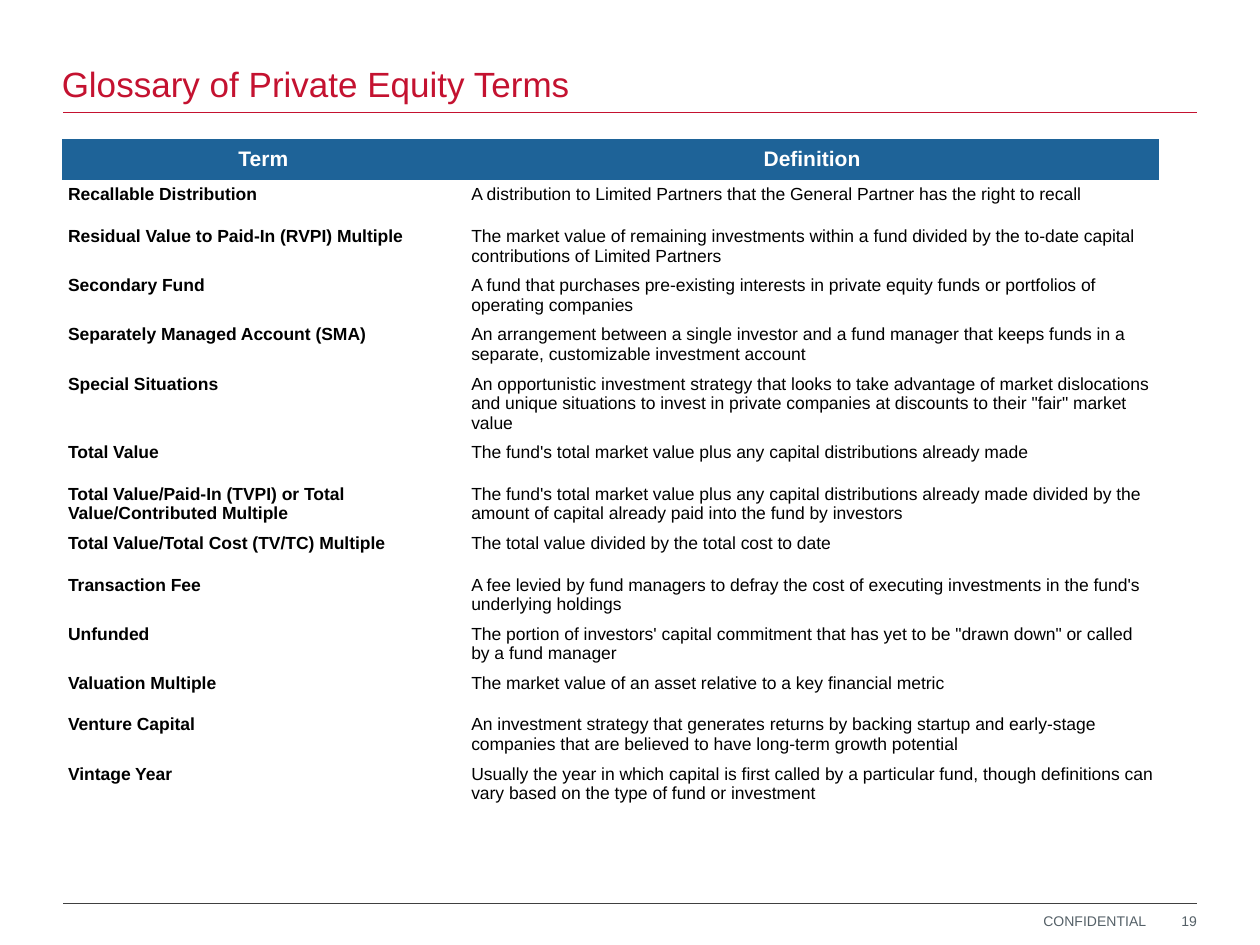
import pptx
import pptx.util
import pptx.dml.color
import pptx.enum.shapes
import pptx.enum.text
from lxml import etree

Inches, Pt = pptx.util.Inches, pptx.util.Pt
RGBColor = pptx.dml.color.RGBColor
PP_ALIGN, MSO_ANCHOR = pptx.enum.text.PP_ALIGN, pptx.enum.text.MSO_ANCHOR

RED = RGBColor(0xC4, 0x12, 0x30)
BLUE = RGBColor(0x1E, 0x63, 0x98)
GREY = RGBColor(0x55, 0x61, 0x68)
DARK = RGBColor(0x40, 0x40, 0x40)
BLACK = RGBColor(0, 0, 0)
WHITE = RGBColor(0xFF, 0xFF, 0xFF)

PLAIN_TABLE_STYLE = "{2D5ABB26-0587-4C30-8999-92F81FD0307C}"

GLOSSARY = [
    ("Term", "Definition"),
    ("Recallable Distribution",
     "A distribution to Limited Partners that the General Partner has the right to recall"),
    ("Residual Value to Paid-In (RVPI) Multiple",
     "The market value of remaining investments within a fund divided by the to-date "
     "capital contributions of Limited Partners"),
    ("Secondary Fund",
     "A fund that purchases pre-existing interests in private equity funds or "
     "portfolios of operating companies"),
    ("Separately Managed Account (SMA)",
     "An arrangement between a single investor and a fund manager that keeps funds in a "
     "separate, customizable investment account"),
    ("Special Situations",
     "An opportunistic investment strategy that looks to take advantage of market "
     "dislocations and unique situations to invest in private companies at discounts to "
     'their "fair" market value'),
    ("Total Value",
     "The fund's total market value plus any capital distributions already made"),
    ("Total Value/Paid-In (TVPI) or Total Value/Contributed Multiple",
     "The fund's total market value plus any capital distributions already made divided "
     "by the amount of capital already paid into the fund by investors"),
    ("Total Value/Total Cost (TV/TC) Multiple",
     "The total value divided by the total cost to date"),
    ("Transaction Fee",
     "A fee levied by fund managers to defray the cost of executing investments in the "
     "fund's underlying holdings"),
    ("Unfunded",
     "The portion of investors' capital commitment that has yet to be \"drawn down\" or "
     "called by a fund manager"),
    ("Valuation Multiple",
     "The market value of an asset relative to a key financial metric"),
    ("Venture Capital",
     "An investment strategy that generates returns by backing startup and early-stage "
     "companies that are believed to have long-term growth potential"),
    ("Vintage Year",
     "Usually the year in which capital is first called by a particular fund, though "
     "definitions can vary based on the type of fund or investment"),
]


def format_paragraph(paragraph, size, color, bold=False, align=PP_ALIGN.LEFT):
    paragraph.alignment = align
    paragraph.font.name = "Arial"
    paragraph.font.size = Pt(size)
    paragraph.font.bold = bold
    paragraph.font.color.rgb = color


presentation = pptx.Presentation()
presentation.slide_width, presentation.slide_height = Inches(10), Inches(7.5)
slide = presentation.slides.add_slide(presentation.slide_layouts[5])
shapes = slide.shapes

# Page grid
MARGIN = Inches(0.5)
RIGHT = presentation.slide_width - MARGIN
TEXT_LEFT = Inches(0.49)
ROW_HEIGHT = Inches(0.33)
COLUMN_WIDTHS = [Inches(3.2), Inches(5.51)]

# Title
title = shapes.title
title.left, title.top = TEXT_LEFT, Inches(0.11)
title.width, title.height = Inches(7.09), Inches(0.78)
frame = title.text_frame
frame.text = "Glossary of Private Equity Terms"
frame.auto_size = pptx.enum.text.MSO_AUTO_SIZE.NONE
frame.vertical_anchor = MSO_ANCHOR.BOTTOM
frame.margin_left = frame.margin_right = 0
frame.paragraphs[0].line_spacing = 0.95
format_paragraph(frame.paragraphs[0], 20, RED)

# Rules under the title and above the footer
for y, color in [(0.89, RED), (7.17, DARK)]:
    rule = shapes.add_connector(pptx.enum.shapes.MSO_CONNECTOR.STRAIGHT,
                                MARGIN, Inches(y), RIGHT, Inches(y))
    rule.line.color.rgb = color
    rule.line.width = Pt(0.5)
    etree.SubElement(rule.element.spPr, pptx.oxml.ns.qn("a:effectLst"))

# Glossary table
graphic_frame = shapes.add_table(len(GLOSSARY), len(COLUMN_WIDTHS), TEXT_LEFT, Inches(1.1),
                                 sum(COLUMN_WIDTHS), ROW_HEIGHT * len(GLOSSARY))
table = graphic_frame.table
table.horz_banding = False
table._tbl.tblPr.find(pptx.oxml.ns.qn("a:tableStyleId")).text = PLAIN_TABLE_STYLE
for column, width in zip(table.columns, COLUMN_WIDTHS):
    column.width = width
for row_index, entry in enumerate(GLOSSARY):
    table.rows[row_index].height = ROW_HEIGHT
    for column_index, text in enumerate(entry):
        cell = table.cell(row_index, column_index)
        cell.text = text
        cell.margin_left = cell.margin_right = Inches(0.05)
        cell.margin_top = cell.margin_bottom = Inches(0.04)
        paragraph = cell.text_frame.paragraphs[0]
        if row_index == 0:
            cell.fill.solid()
            cell.fill.fore_color.rgb = BLUE
            cell.vertical_anchor = MSO_ANCHOR.MIDDLE
            format_paragraph(paragraph, 12, WHITE, True, PP_ALIGN.CENTER)
        else:
            cell.fill.background()
            cell.vertical_anchor = MSO_ANCHOR.TOP
            format_paragraph(paragraph, 10, BLACK, column_index == 0)

# Footer: confidentiality mark and page number
for text, left, top, width, height, align, wrap in [
    ("CONFIDENTIAL", 8.28, 7.24, 0.82, 0.13, PP_ALIGN.LEFT, False),
    ("19", 8.78, 7.22, 0.72, 0.18, PP_ALIGN.RIGHT, True),
]:
    box = shapes.add_textbox(Inches(left), Inches(top), Inches(width), Inches(height))
    frame = box.text_frame
    frame.text = text
    frame.word_wrap = wrap
    frame.vertical_anchor = MSO_ANCHOR.MIDDLE
    frame.margin_left = frame.margin_right = frame.margin_top = frame.margin_bottom = 0
    format_paragraph(frame.paragraphs[0], 8, GREY, align=align)

presentation.save("out.pptx")
